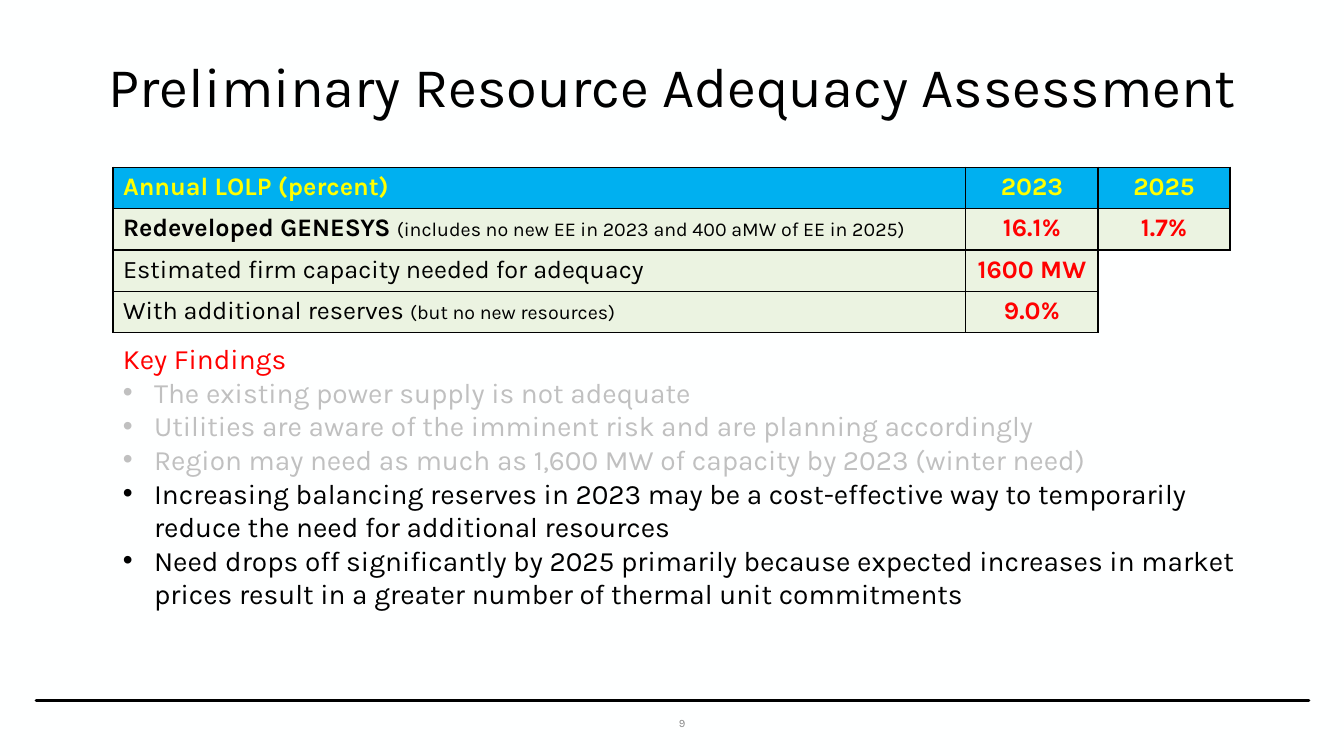
from lxml import etree
from pptx import Presentation
from pptx.dml.color import RGBColor
from pptx.enum.shapes import MSO_CONNECTOR, MSO_SHAPE
from pptx.enum.text import MSO_ANCHOR, PP_ALIGN
from pptx.oxml.ns import qn
from pptx.util import Inches, Pt

LEFT, CENTER = PP_ALIGN.LEFT, PP_ALIGN.CENTER
MIDDLE, TOP = MSO_ANCHOR.MIDDLE, MSO_ANCHOR.TOP
STRAIGHT = MSO_CONNECTOR.STRAIGHT
RECTANGLE = MSO_SHAPE.RECTANGLE
TITLE_ONLY = 5

FONT = "Karla"
BLACK, RED, YELLOW, GREY = "000000", "FF0000", "FFFF00", "C0C0C0"
PAPER, HEADER_BLUE, PALE_GREEN = "FEFFFF", "00B0F0", "EBF3E1"

COLUMN_WIDTHS = [8.46, 1.31, 1.31]
ROW_HEIGHT = 0.41
LABELS = [
    ("Annual LOLP (percent)", ""),
    ("Redeveloped GENESYS ", "(includes no new EE in 2023 and 400 aMW of EE in 2025)"),
    ("Estimated firm capacity needed for adequacy", ""),
    ("With additional reserves ", "(but no new resources)"),
]
VALUES = [("2023", "2025"), ("16.1%", "1.7%"), ("1600 MW", ""), ("9.0%", "")]
FINDINGS = [
    ("The existing power supply is not adequate", GREY),
    ("Utilities are aware of the imminent risk and are planning accordingly", GREY),
    ("Region may need as much as 1,600 MW of capacity by 2023 (winter need)", GREY),
    ("Increasing balancing reserves in 2023 may be a cost-effective way to "
     "temporarily reduce the need for additional resources", BLACK),
    ("Need drops off significantly by 2025 primarily because expected increases "
     "in market prices result in a greater number of thermal unit commitments", BLACK),
]


def rgb(color):
    return RGBColor.from_string(color)


def fill_solid(fill, color):
    fill.solid()
    fill.fore_color.rgb = rgb(color)


def add_text(paragraph, text, size=18, color=BLACK, bold=False, align=LEFT):
    paragraph.alignment = align
    run = paragraph.add_run()
    run.text = text
    run.font.name = FONT
    run.font.size = Pt(size)
    run.font.bold = bold
    run.font.color.rgb = rgb(color)


def add_bullet(paragraph):
    properties = paragraph._p.get_or_add_pPr()
    properties.set("marL", str(Inches(0.31)))
    properties.set("indent", str(-Inches(0.31)))
    etree.SubElement(properties, qn("a:buFont")).set("typeface", "Arial")
    etree.SubElement(properties, qn("a:buChar")).set("char", "•")


def set_borders(cell, visible_sides):
    properties = cell._tc.get_or_add_tcPr()
    for side in "LRTB":
        line = etree.SubElement(properties, qn(f"a:ln{side}"))
        line.set("w", str(Pt(1)))
        if side in visible_sides:
            solid = etree.SubElement(line, qn("a:solidFill"))
            etree.SubElement(solid, qn("a:srgbClr")).set("val", BLACK)
        else:
            etree.SubElement(line, qn("a:noFill"))


def add_title(slide, text):
    title = slide.shapes.title
    title.left, title.top = Inches(0.92), Inches(0.4)
    title.width, title.height = Inches(11.5), Inches(0.98)
    title.text_frame.word_wrap = True
    title.text_frame.vertical_anchor = MIDDLE
    paragraph = title.text_frame.paragraphs[0]
    paragraph.line_spacing = 0.9
    add_text(paragraph, text, size=40, align=CENTER)


def add_adequacy_table(slide):
    frame = slide.shapes.add_table(
        len(LABELS), len(COLUMN_WIDTHS), Inches(1.12), Inches(1.66),
        Inches(sum(COLUMN_WIDTHS)), Inches(ROW_HEIGHT * len(LABELS)))
    table = frame.table
    table.first_row = table.horz_banding = False
    for column, width in zip(table.columns, COLUMN_WIDTHS):
        column.width = Inches(width)
    for row_index, ((label, note), values) in enumerate(zip(LABELS, VALUES)):
        table.rows[row_index].height = Inches(ROW_HEIGHT)
        is_header = row_index == 0
        row_fill = HEADER_BLUE if is_header else PALE_GREEN

        label_cell = table.cell(row_index, 0)
        set_borders(label_cell, "LRTB")
        fill_solid(label_cell.fill, row_fill)
        paragraph = label_cell.text_frame.paragraphs[0]
        add_text(paragraph, label, color=YELLOW if is_header else BLACK,
                 bold=row_index < 2)
        if note:
            add_text(paragraph, note, size=14)

        for column_index, value in enumerate(values, start=1):
            cell = table.cell(row_index, column_index)
            if value:
                set_borders(cell, "LRTB")
                fill_solid(cell.fill, row_fill)
                add_text(cell.text_frame.paragraphs[0], value, bold=True,
                         color=YELLOW if is_header else RED, align=CENTER)
            else:
                set_borders(cell, "LT" if VALUES[row_index - 1][1] else "L")
                fill_solid(cell.fill, PAPER)


def add_key_findings(slide):
    box = slide.shapes.add_shape(
        RECTANGLE, Inches(1.12), Inches(3.34), Inches(11.5), Inches(2.79))
    box.shadow.inherit = False
    fill_solid(box.fill, PAPER)
    box.line.fill.background()
    text_frame = box.text_frame
    text_frame.word_wrap = True
    text_frame.vertical_anchor = TOP
    add_text(text_frame.paragraphs[0], "Key Findings", size=20, color=RED)
    for finding, color in FINDINGS:
        paragraph = text_frame.add_paragraph()
        add_bullet(paragraph)
        add_text(paragraph, finding, size=20, color=color)


def add_footer(slide, number):
    rule = slide.shapes.add_connector(
        STRAIGHT, Inches(0.36), Inches(6.95), Inches(12.98), Inches(6.95))
    rule.line.color.rgb = rgb(BLACK)
    rule.line.width = Pt(2.5)
    rule.line._get_or_add_ln().set("cap", "rnd")
    etree.SubElement(rule._element.spPr, qn("a:effectLst"))

    box = slide.shapes.add_textbox(
        Inches(6.38), Inches(7.02), Inches(0.77), Inches(0.3))
    box.text_frame.word_wrap = True
    box.text_frame.vertical_anchor = MIDDLE
    add_text(box.text_frame.paragraphs[0], number, size=8, color="8C8C8C", align=CENTER)


def main():
    presentation = Presentation()
    presentation.slide_width = Inches(13.33)
    presentation.slide_height = Inches(7.5)
    slide = presentation.slides.add_slide(presentation.slide_layouts[TITLE_ONLY])
    fill_solid(slide.background.fill, PAPER)
    add_title(slide, "Preliminary Resource Adequacy Assessment")
    add_adequacy_table(slide)
    add_key_findings(slide)
    add_footer(slide, "9")
    presentation.save("out.pptx")


if __name__ == "__main__":
    main()
